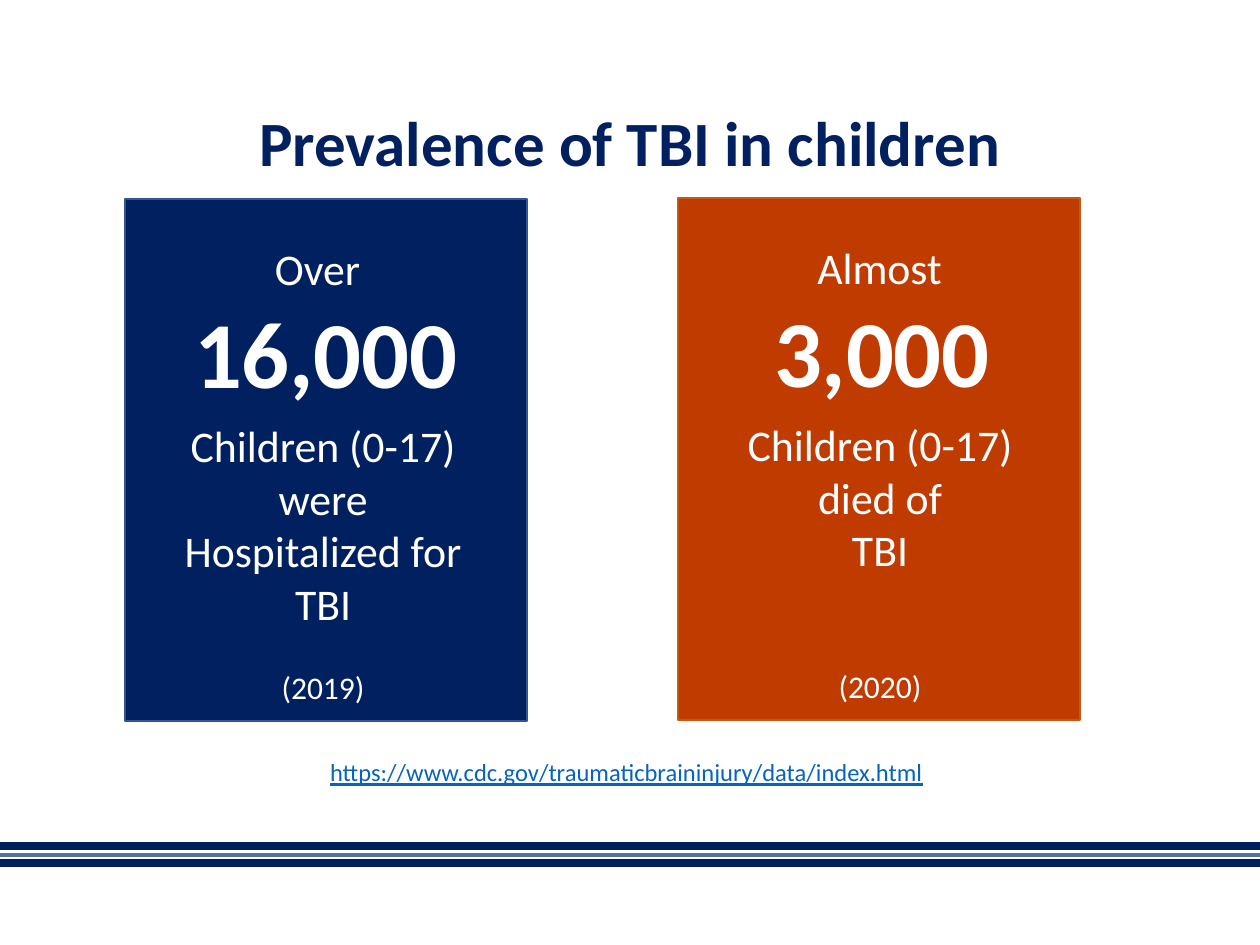
from lxml import etree
from pptx import Presentation
from pptx.dml.color import RGBColor
from pptx.enum.shapes import MSO_CONNECTOR, MSO_SHAPE
from pptx.enum.text import MSO_ANCHOR, PP_ALIGN
from pptx.oxml.ns import qn
from pptx.util import Pt

STRAIGHT = MSO_CONNECTOR.STRAIGHT
RECTANGLE = MSO_SHAPE.RECTANGLE
CENTER = PP_ALIGN.CENTER
TOP, MIDDLE = MSO_ANCHOR.TOP, MSO_ANCHOR.MIDDLE

NAVY = RGBColor(0x00, 0x20, 0x60)
STRIPE_NAVY = RGBColor(0x00, 0x1F, 0x5F)
STRIPE_BLUE = RGBColor(0x50, 0x70, 0xA7)
NAVY_EDGE = RGBColor(0x32, 0x54, 0x91)
ORANGE = RGBColor(0xC0, 0x3B, 0x00)
ORANGE_EDGE = RGBColor(0xC5, 0x5A, 0x11)
LINK_BLUE = RGBColor(0x05, 0x63, 0xC1)
WHITE = RGBColor(0xFF, 0xFF, 0xFF)

SLIDE_WIDTH, SLIDE_HEIGHT = 1260, 945
PANEL_WIDTH, PANEL_HEIGHT = 402, 522


def px(length):
    return round(length * 914400 / 126)


def add_text(left, top, width, height, lines, color, bold=False, underline=False, anchor=TOP):
    """Add centred lines, each given as (text, size, space before) in points."""
    box = slide.shapes.add_textbox(px(left), px(top), px(width), px(height))
    frame = box.text_frame
    frame.word_wrap = True
    frame.vertical_anchor = anchor
    for index, (text, size, space_before) in enumerate(lines):
        paragraph = frame.add_paragraph() if index else frame.paragraphs[0]
        paragraph.alignment = CENTER
        if space_before:
            paragraph.space_before = Pt(space_before)
        run = paragraph.add_run()
        run.text = text
        run.font.name = "Calibri"
        run.font.size = Pt(size)
        run.font.bold = bold
        run.font.underline = underline
        run.font.color.rgb = color


presentation = Presentation()
presentation.slide_width = px(SLIDE_WIDTH)
presentation.slide_height = px(SLIDE_HEIGHT)
slide = presentation.slides.add_slide(presentation.slide_layouts[6])

# Footer stripes
for y, color, weight in [
    (846, STRIPE_NAVY, 4.5),
    (855, STRIPE_BLUE, 2.25),
    (863, STRIPE_NAVY, 4.5),
]:
    stripe = slide.shapes.add_connector(STRAIGHT, 0, px(y), px(SLIDE_WIDTH), px(y))
    stripe.line.color.rgb = color
    stripe.line.width = Pt(weight)
    etree.SubElement(stripe._element.spPr, qn("a:effectLst"))

add_text(87, 50, 1086, 183, [("Prevalence of TBI in children", 36, 0)], NAVY,
         bold=True, anchor=MIDDLE)

# Panels: position, colours, text offsets from the panel's left edge, wording
panels = [
    (125, 199, NAVY, NAVY_EDGE, (69, 0, 38), "Over", "16,000",
     [("Children (0-17)", 25, 0), ("were", 25, 0), ("Hospitalized for TBI", 25, 0),
      ("(2019)", 18, 22)]),
    (678, 198, ORANGE, ORANGE_EDGE, (78, 3, 42), "Almost", "3,000",
     [("Children (0-17)", 25, 0), ("died of", 25, 0), ("TBI", 25, 0),
      ("(2020)", 18, 52)]),
]
for left, top, fill, edge, offsets, lead, number, details in panels:
    panel = slide.shapes.add_shape(RECTANGLE, px(left), px(top), px(PANEL_WIDTH), px(PANEL_HEIGHT))
    panel.shadow.inherit = False
    panel.fill.solid()
    panel.fill.fore_color.rgb = fill
    panel.line.color.rgb = edge
    panel.line.width = Pt(1)

    lead_offset, number_offset, details_offset = offsets
    add_text(left + lead_offset, top + 37, 247, 66, [(lead, 25, 0)], WHITE)
    add_text(left + number_offset, top + 89, PANEL_WIDTH, 127, [(number, 54, 0)], WHITE, bold=True)
    add_text(left + details_offset, top + 214, 320, 301, details, WHITE)

add_text(215, 751, 823, 43,
         [("https://www.cdc.gov/traumaticbraininjury/data/index.html", 14, 0)],
         LINK_BLUE, underline=True)

presentation.save("out.pptx")
